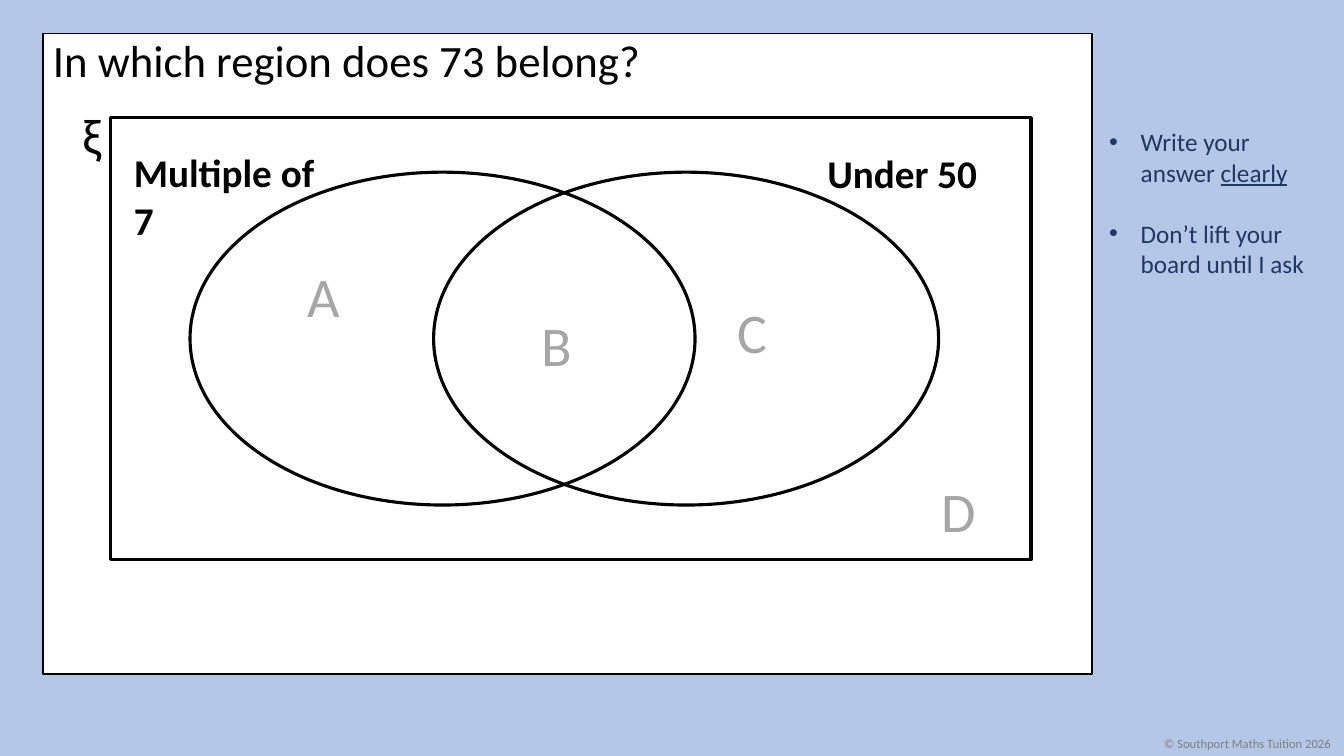
from dataclasses import dataclass

from lxml.etree import SubElement
from pptx import Presentation
from pptx.dml.color import RGBColor
from pptx.enum.shapes import MSO_SHAPE
from pptx.enum.text import PP_ALIGN
from pptx.oxml.ns import qn
from pptx.util import Emu, Pt

EMU_PER_PX = 9525


@dataclass(frozen=True)
class Theme:
    font: str = "Calibri"
    background: str = "B4C7E7"
    panel: str = "FFFFFF"
    ink: str = "000000"
    advice: str = "203864"
    region: str = "A6A6A6"
    footer: str = "808080"
    title_size: int = 32
    set_size: int = 28
    region_size: int = 40
    universal_size: int = 36
    advice_size: int = 18
    footer_size: int = 9
    panel_line: float = 1
    diagram_line: float = 2.25


THEME = Theme()


def px(*lengths):
    return [Emu(length * EMU_PER_PX) for length in lengths]


def add_outline(page, kind, bounds, width, fill=None):
    shape = page.shapes.add_shape(kind, *px(*bounds))
    shape.shadow.inherit = False
    if fill:
        shape.fill.solid()
        shape.fill.fore_color.rgb = RGBColor.from_string(fill)
    else:
        shape.fill.background()
    shape.line.color.rgb = RGBColor.from_string(THEME.ink)
    shape.line.width = Pt(width)


def style(para, size, color, bold=False):
    para.font.name = THEME.font
    para.font.size = Pt(size)
    para.font.bold = bold
    para.font.color.rgb = RGBColor.from_string(color)


def add_text(page, bounds, lines, size, color, bold=False, align=PP_ALIGN.LEFT, wrap=False):
    box = page.shapes.add_textbox(*px(*bounds))
    frame = box.text_frame
    frame.word_wrap = wrap
    frame.text = "\n".join(lines)
    for para in frame.paragraphs:
        para.alignment = align
        style(para, size, color, bold)
    return frame


def add_bullet(para):
    properties = para._p.get_or_add_pPr()
    indent, = px(30)
    properties.set("marL", str(indent))
    properties.set("indent", str(-indent))
    SubElement(properties, qn("a:buFont"), typeface="Arial")
    SubElement(properties, qn("a:buChar"), char="•")


def add_advice(page, bounds):
    box = page.shapes.add_textbox(*px(*bounds))
    frame = box.text_frame
    frame.word_wrap = True
    answer, board = frame.paragraphs[0], frame.add_paragraph()
    for para in (answer, board):
        add_bullet(para)
        style(para, THEME.advice_size, THEME.advice)
    answer.add_run().text = "Write your answer "
    emphasis = answer.add_run()
    emphasis.text = "clearly"
    emphasis.font.underline = True
    board.add_run().text = "Don’t lift your board until I ask"
    board.space_before = Pt(22)


def add_venn(page):
    for left in (181, 413):
        add_outline(page, MSO_SHAPE.OVAL, (left, 164, 481, 317), THEME.diagram_line)
    add_outline(page, MSO_SHAPE.RECTANGLE, (105, 112, 877, 421), THEME.diagram_line)
    add_text(page, (118, 137, 193, 100), ["Multiple of", "7"],
             THEME.set_size, THEME.ink, bold=True)
    add_text(page, (776, 137, 164, 55), ["Under 50"],
             THEME.set_size, THEME.ink, bold=True, align=PP_ALIGN.RIGHT)
    add_text(page, (69, 94, 55, 68), ["ξ"], THEME.universal_size, THEME.ink, wrap=True)
    for name, left, top in (("A", 283, 244), ("B", 505, 291), ("C", 692, 279), ("D", 887, 449)):
        add_text(page, (left, top, 50, 74), [name],
                 THEME.region_size, THEME.region, align=PP_ALIGN.CENTER)


def main():
    deck = Presentation()
    deck.slide_width, deck.slide_height = px(1280, 720)
    page = deck.slides.add_slide(deck.slide_layouts[6])
    page.background.fill.solid()
    page.background.fill.fore_color.rgb = RGBColor.from_string(THEME.background)

    panel = (41, 32, 999, 610)
    add_outline(page, MSO_SHAPE.RECTANGLE, panel, THEME.panel_line, THEME.panel)
    add_advice(page, (1047, 116, 223, 156))
    add_text(page, (1099, 696, 181, 24), ["© Southport Maths Tuition 2026"],
             THEME.footer_size, THEME.footer)
    title = add_text(page, panel, ["In which region does 73 belong?"],
                     THEME.title_size, THEME.ink, wrap=True)
    title.paragraphs[0].line_spacing = 0.9
    add_venn(page)
    deck.save("out.pptx")


if __name__ == "__main__":
    main()
